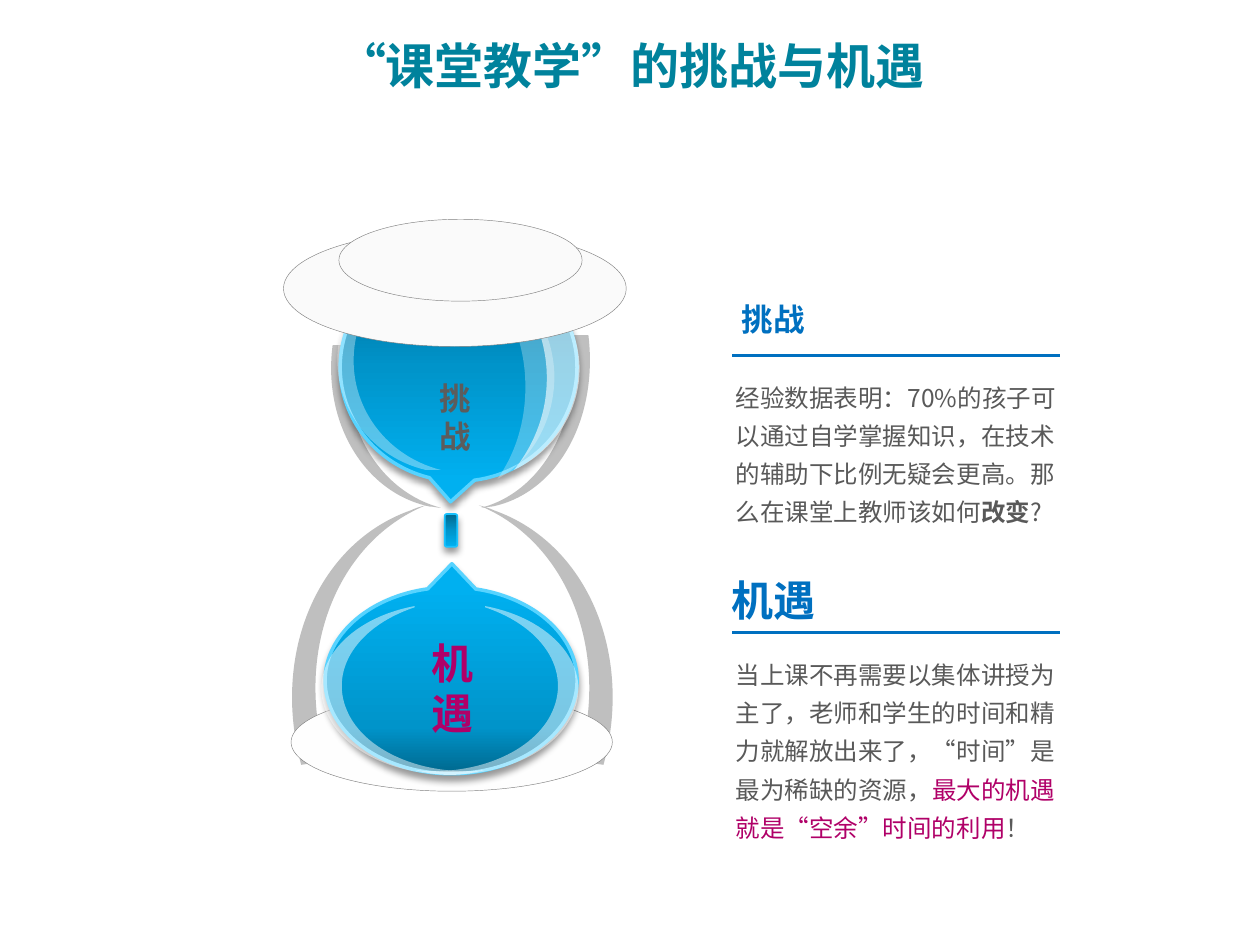
import math
from dataclasses import dataclass
from typing import NamedTuple

import pptx
import pptx.dml.color
import pptx.enum.shapes
import pptx.enum.text
import pptx.oxml.ns
import pptx.util
from lxml import etree

SHAPE = pptx.enum.shapes.MSO_SHAPE
ALIGN = pptx.enum.text.PP_ALIGN
ANCHOR = pptx.enum.text.MSO_ANCHOR
qn = pptx.oxml.ns.qn

COLUMNS, ROWS = 10, 7.5
SLIDE_WIDTH, SLIDE_HEIGHT = pptx.util.Inches(10), pptx.util.Inches(7.5)


@dataclass(frozen=True)
class Theme:
    title: str = "00829C"
    heading: str = "0070C0"
    body: str = "595959"
    muted: str = "5C5C5C"
    accent: str = "B00068"
    frame: str = "BFBFBF"
    plate: str = "FAFAFA"
    base: str = "FEFEFE"
    plate_edge: str = "808080"
    glass_edge: str = "57D3FF"
    neck_edge: str = "19C3FF"
    sand: tuple = ("00688E", "0094CA", "00B0F0")
    shine: str = "FFFFFF"
    title_size: int = 28
    large: int = 24
    medium: int = 18
    small: int = 14
    title_font: str = "Montserrat"
    font: str = "Noto Sans CJK SC"


THEME = Theme()


class Box(NamedTuple):
    """Left, top, width and height in grid columns and rows."""
    left: float
    top: float
    width: float
    height: float

    def emu(self) -> tuple:
        return (column(self.left), row(self.top), column(self.width), row(self.height))


class Run(NamedTuple):
    text: str
    color: str
    bold: bool = False


class Curve(NamedTuple):
    """An outline: 2 numbers are a line's end, 6 a cubic curve's controls and end."""
    box: Box
    start: tuple
    segments: tuple
    rotation: float = 0
    fill: str = THEME.frame
    alpha: int = 100


class Topic(NamedTuple):
    heading: str
    heading_box: Box
    size: int
    rule_row: float
    body_height: float
    runs: tuple


LOWER_FRAME = Curve(Box(2.08, 4.23, 1.63, 1.65), (2.39, 6.07), (
    (2.59, 6.04), (2.33, 5.18, 2.67, 4.3, 3.38, 4.01),
    (3.34, 4.02, 3.3, 4.03, 3.26, 4.05), (2.52, 4.31, 2.15, 5.19, 2.39, 6.07)), 160.3)
UPPER_FRAMES = (
    Curve(Box(3.69, 2.73, 1.1, 1.21), (4.67, 2.66), (
        (4.54, 2.66), (4.63, 3.31, 4.32, 3.9, 3.82, 4.03),
        (3.85, 4.03, 3.88, 4.02, 3.91, 4.02), (4.43, 3.91, 4.75, 3.32, 4.67, 2.66)), 348.4),
    Curve(Box(2.52, 2.82, 1.1, 1.12), (2.64, 2.74), (
        (2.77, 2.74), (2.68, 3.35, 3, 3.9, 3.5, 4.03),
        (3.47, 4.03, 3.44, 4.02, 3.41, 4.02), (2.89, 3.91, 2.56, 3.35, 2.64, 2.74)), 11.6))
LOWER_SHINE = Curve(Box(3.29, 4.81, 1.3, 1.34), (3.85, 4.81), (
    (4.43, 4.92, 4.75, 5.35, 4.51, 5.73), (4.35, 5.99, 3.97, 6.15, 3.56, 6.15),
    (3.46, 6.15, 3.37, 6.13, 3.29, 6.11), (3.4, 6.12),
    (3.81, 6.13, 4.19, 5.97, 4.35, 5.71), (4.56, 5.36, 4.33, 4.98, 3.85, 4.82)),
    180, THEME.shine, 48)
UPPER_SHINES = (
    Curve(Box(3.81, 2.03, 0.78, 1.7), (3.81, 2.03), (
        (4.25, 2.11, 4.58, 2.46, 4.6, 2.9), (4.61, 3.26, 4.4, 3.58, 4.08, 3.73),
        (4.24, 3.53, 4.34, 3.28, 4.34, 3), (4.34, 2.6, 4.13, 2.24, 3.81, 2.03)),
        0, THEME.shine, 60),
    Curve(Box(3.71, 2.1, 0.68, 1.7), (3.71, 2.1), (
        (4.09, 2.17, 4.38, 2.53, 4.4, 2.96), (4.41, 3.32, 4.23, 3.65, 3.95, 3.8),
        (4.09, 3.6, 4.17, 3.35, 4.17, 3.07), (4.17, 2.66, 3.99, 2.31, 3.71, 2.1)),
        0, THEME.shine, 28),
    Curve(Box(2.68, 1.95, 1.01, 1.78), (3.59, 1.95), (
        (3.62, 1.95, 3.65, 1.95, 3.68, 1.95), (3.69, 1.95),
        (3.25, 1.98, 2.89, 2.29, 2.82, 2.71), (2.74, 3.17, 3.03, 3.61, 3.5, 3.73),
        (3.38, 3.73), (2.91, 3.62, 2.61, 3.17, 2.69, 2.71),
        (2.77, 2.28, 3.14, 1.97, 3.59, 1.95)), 0, THEME.shine, 34))

TOPICS = (
    Topic("挑战", Box(5.38, 2.33, 1.51, 0.4), THEME.medium, 2.82, 1.33, (
        Run("经验数据表明：70%的孩子可以通过自学掌握知识，在技术的辅助下比例无疑会更高。"
            "那么在课堂上教师该如何", THEME.body),
        Run("改变", THEME.body, True), Run("?", THEME.body))),
    Topic("机遇", Box(5.55, 4.51, 1.18, 0.5), THEME.large, 5.02, 1.63, (
        Run("当上课不再需要以集体讲授为主了，老师和学生的时间和精力就解放出来了，"
            "“时间”是最为稀缺的资源，", THEME.body),
        Run("最大的机遇就是“空余”时间的利用", THEME.accent), Run("！", THEME.body))),
)


def column(count: float) -> int:
    return round(SLIDE_WIDTH * count / COLUMNS)


def row(count: float) -> int:
    return round(SLIDE_HEIGHT * count / ROWS)


def rgb(color: str) -> pptx.dml.color.RGBColor:
    return pptx.dml.color.RGBColor.from_string(color)


def add_text(slide, box: Box, runs: tuple, *, size: int, font: str = THEME.font,
             align=ALIGN.LEFT, anchor=ANCHOR.TOP, spacing: float = 1.0) -> None:
    frame = slide.shapes.add_textbox(*box.emu()).text_frame
    frame.word_wrap = True
    frame.vertical_anchor = anchor
    paragraph = frame.paragraphs[0]
    paragraph.alignment = align
    paragraph.line_spacing = spacing
    for part in runs:
        run = paragraph.add_run()
        run.text = part.text
        run.font.size = pptx.util.Pt(size)
        run.font.bold = part.bold
        run.font.color.rgb = rgb(part.color)
        run.font.name = font
        properties = run._r.get_or_add_rPr()
        properties.set("lang", "zh-CN")
        etree.SubElement(properties, qn("a:ea"), typeface=THEME.font)


def mirror(curve: Curve, axis: float) -> Curve:
    """Reflect an outline left to right about a column."""
    def flip(values: tuple) -> tuple:
        return tuple(v if i % 2 else 2 * axis - v for i, v in enumerate(values))
    box = curve.box._replace(left=2 * axis - curve.box.left - curve.box.width)
    return curve._replace(box=box, start=flip(curve.start), rotation=360 - curve.rotation,
                          segments=tuple(map(flip, curve.segments)))


def add_curve(slide, curve: Curve) -> None:
    """Draw the outline in its box, turning its points back by the box's rotation."""
    box, angle = curve.box, math.radians(-curve.rotation)

    def local(x: float, y: float) -> tuple:
        dx, dy = x - box.left - box.width / 2, y - box.top - box.height / 2
        return (column(dx * math.cos(angle) - dy * math.sin(angle) + box.width / 2),
                row(dx * math.sin(angle) + dy * math.cos(angle) + box.height / 2))

    builder = slide.shapes.build_freeform(0, 0)
    builder.add_line_segments([box.emu()[2:]], close=True)
    shape = builder.convert_to_shape()
    shape.left, shape.top, shape.width, shape.height = box.emu()
    shape.rotation = curve.rotation
    outline = next(shape._element.iter(qn("a:path")))
    for step in list(outline):
        outline.remove(step)
    for index, values in enumerate((curve.start, *curve.segments)):
        kind = "a:moveTo" if index == 0 else "a:lnTo" if len(values) == 2 else "a:cubicBezTo"
        step = etree.SubElement(outline, qn(kind))
        for x, y in zip(values[::2], values[1::2]):
            left, top = local(x, y)
            etree.SubElement(step, qn("a:pt"), x=str(left), y=str(top))
    etree.SubElement(outline, qn("a:close"))
    shape.shadow.inherit = False
    shape.line.fill.background()
    shape.fill.solid()
    shape.fill.fore_color.rgb = rgb(curve.fill)
    if curve.alpha < 100:
        color = shape._element.spPr.find(qn("a:solidFill"))[0]
        etree.SubElement(color, qn("a:alpha"), val=str(curve.alpha * 1000))


def add_solid(slide, kind, box: Box, edge: str, edge_width: float):
    shape = slide.shapes.add_shape(kind, *box.emu())
    shape.shadow.inherit = False
    shape.line.color.rgb = rgb(edge)
    shape.line.width = pptx.util.Pt(edge_width)
    return shape


def add_plate(slide, box: Box, fill: str) -> None:
    plate = add_solid(slide, SHAPE.OVAL, box, THEME.plate_edge, 0.25)
    plate.fill.solid()
    plate.fill.fore_color.rgb = rgb(fill)


def add_sand(slide, kind, box: Box, edge: str, edge_width: float, *,
             middle: int = 50, pointer: tuple = (), rotation: int = 0) -> None:
    """Add a glossy blue part with a three-stop gradient and a soft shadow."""
    sand = add_solid(slide, kind, box, edge, edge_width)
    sand.rotation = rotation
    for index, value in enumerate(pointer):
        sand.adjustments[index] = value
    sand.fill.gradient()
    sand.fill.gradient_angle = 270
    properties = sand._element.spPr
    stops = properties.find(f"{qn('a:gradFill')}/{qn('a:gsLst')}")
    for stop in list(stops):
        stops.remove(stop)
    for position, color in zip((0, middle, 100), THEME.sand):
        stop = etree.SubElement(stops, qn("a:gs"), pos=str(position * 1000))
        etree.SubElement(stop, qn("a:srgbClr"), val=color)
    shadow = etree.SubElement(
        properties.find(qn("a:effectLst")), qn("a:outerShdw"), dir="5400000",
        blurRad=str(pptx.util.Pt(4)), dist=str(pptx.util.Pt(3)), rotWithShape="0")
    black = etree.SubElement(shadow, qn("a:srgbClr"), val="000000")
    etree.SubElement(black, qn("a:alpha"), val="40000")


def add_rule(slide, left: float, right: float, at_row: float) -> None:
    rule = slide.shapes.add_connector(pptx.enum.shapes.MSO_CONNECTOR.STRAIGHT,
                                      column(left), row(at_row), column(right), row(at_row))
    rule.line.color.rgb = rgb(THEME.heading)
    rule.line.width = pptx.util.Pt(1.5)
    etree.SubElement(rule._element.spPr, qn("a:effectLst"))


def add_hourglass(slide) -> None:
    for curve in (LOWER_FRAME, mirror(LOWER_FRAME, 3.59), *UPPER_FRAMES):
        add_curve(slide, curve)
    add_plate(slide, Box(2.31, 5.5, 2.55, 0.78), THEME.base)
    add_sand(slide, SHAPE.ROUNDED_RECTANGLE, Box(3.53, 4.08, 0.1, 0.26), THEME.neck_edge, 1)
    add_sand(slide, SHAPE.OVAL_CALLOUT, Box(2.58, 4.66, 2, 1.48), THEME.glass_edge, 2,
             middle=25, pointer=(-0.003, 0.626), rotation=180)
    for curve in (LOWER_SHINE, mirror(LOWER_SHINE, 3.57)):
        add_curve(slide, curve)
    add_sand(slide, SHAPE.OVAL_CALLOUT, Box(2.7, 2.01, 1.88, 1.81), THEME.glass_edge, 2,
             pointer=(-0.034, 0.59))
    for curve in UPPER_SHINES:
        add_curve(slide, curve)
    for lid in (Box(2.25, 1.83, 2.72, 0.92), Box(2.69, 1.74, 1.93, 0.65)):
        add_plate(slide, lid, THEME.plate)
    add_text(slide, Box(3.27, 2.96, 0.68, 0.71), (Run("挑战", THEME.muted, True),),
             size=THEME.medium, align=ALIGN.CENTER)
    add_text(slide, Box(3.25, 5.01, 0.68, 0.91), (Run("机遇", THEME.accent, True),),
             size=THEME.large, align=ALIGN.CENTER)


def add_topic(slide, topic: Topic) -> None:
    add_text(slide, topic.heading_box, (Run(topic.heading, THEME.heading, True),),
             size=topic.size, align=ALIGN.CENTER)
    add_rule(slide, 5.81, 8.41, topic.rule_row)
    add_text(slide, Box(5.74, topic.rule_row + 0.1, 2.82, topic.body_height), topic.runs,
             size=THEME.small, spacing=1.3)


def main() -> None:
    deck = pptx.Presentation()
    deck.slide_width, deck.slide_height = SLIDE_WIDTH, SLIDE_HEIGHT
    slide = deck.slides.add_slide(deck.slide_layouts[6])
    add_text(slide, Box(0.28, 0.21, 9.45, 0.61),
             (Run("“课堂教学”的挑战与机遇", THEME.title, True),), size=THEME.title_size,
             font=THEME.title_font, align=ALIGN.CENTER, anchor=ANCHOR.MIDDLE)
    add_hourglass(slide)
    for topic in TOPICS:
        add_topic(slide, topic)
    deck.save("out.pptx")


if __name__ == "__main__":
    main()
